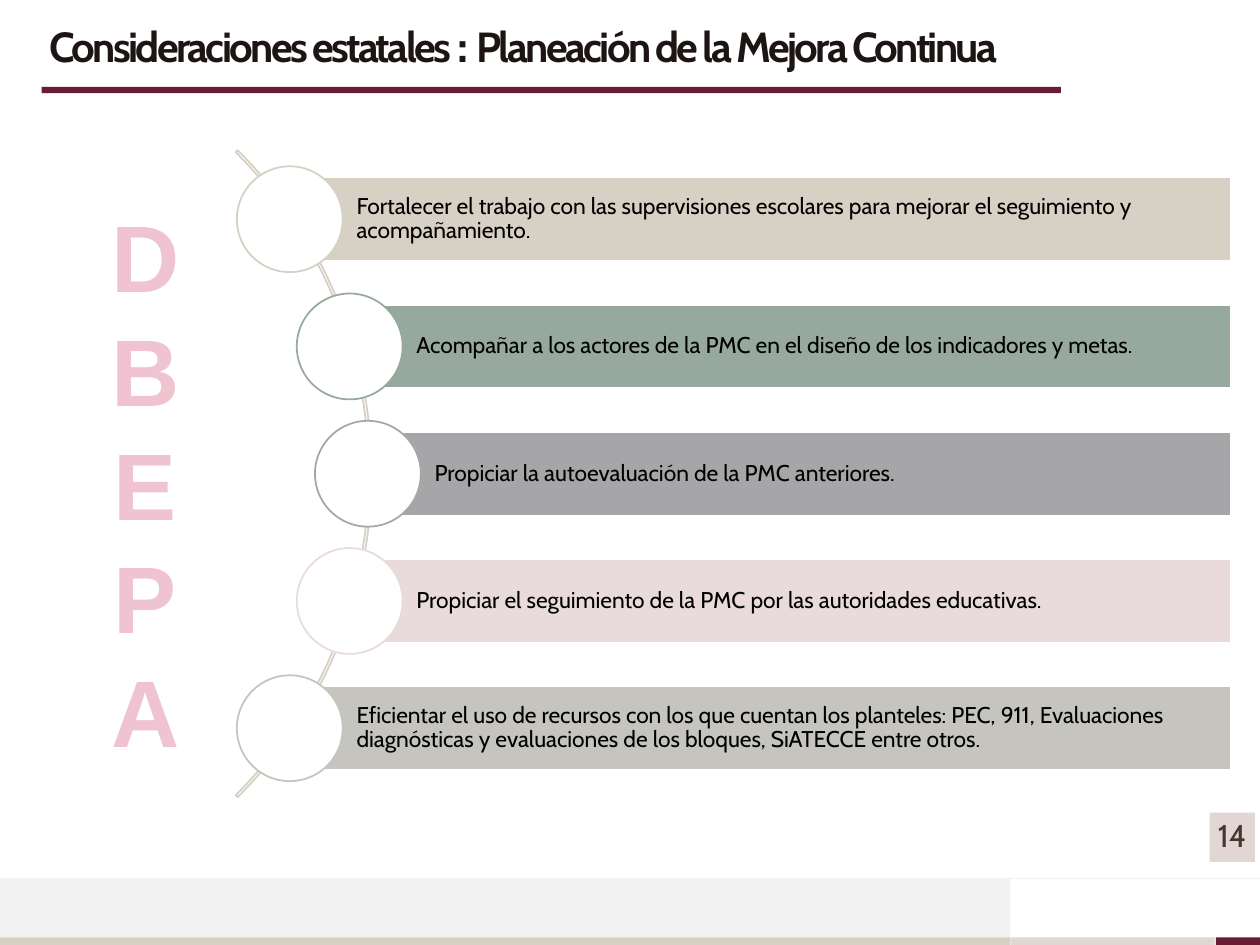
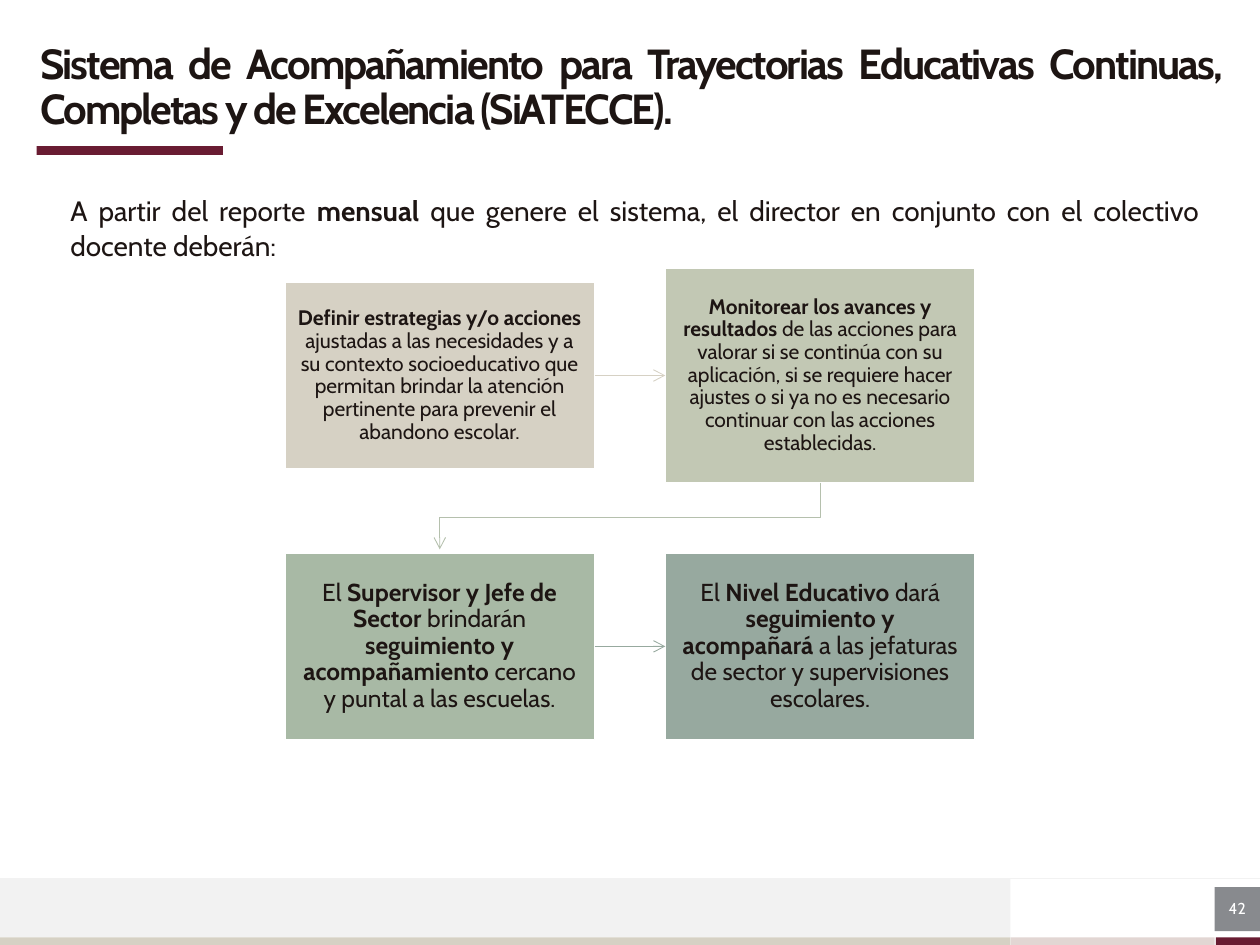
from math import sqrt

from lxml.etree import SubElement
from pptx import Presentation
from pptx.dml.color import RGBColor
from pptx.enum.shapes import MSO_CONNECTOR as Connector, MSO_SHAPE as Shape
from pptx.enum.text import MSO_ANCHOR as Anchor, MSO_AUTO_SIZE as AutoSize, PP_ALIGN as Align
from pptx.oxml.ns import qn
from pptx.util import Inches, Pt

WHITE = RGBColor(0xFF, 0xFF, 0xFF)
BLACK = RGBColor(0x00, 0x00, 0x00)
INK = RGBColor(0x1D, 0x15, 0x13)
BROWN = RGBColor(0x49, 0x35, 0x30)
WINE = RGBColor(0x69, 0x1C, 0x32)
PINK = RGBColor(0xEF, 0xC3, 0xD0)
ROSE = RGBColor(0xE9, 0xDB, 0xDB)
BLUSH = RGBColor(0xE2, 0xD6, 0xD3)
SAND = RGBColor(0xD6, 0xD1, 0xC4)
STONE = RGBColor(0xC5, 0xC4, 0xBF)
MOSS = RGBColor(0xC2, 0xC8, 0xB4)
SAGE = RGBColor(0xA8, 0xB9, 0xA5)
PALE_SAGE = RGBColor(0xB5, 0xC0, 0xAD)
TEAL = RGBColor(0x97, 0xA9, 0x9F)
GRAY = RGBColor(0xA6, 0xA6, 0xA8)
DARK_GRAY = RGBColor(0x88, 0x8A, 0x8E)
LIGHT_GRAY = RGBColor(0xF2, 0xF2, 0xF2)
FONT = "Cabin"


class Builder:
    """Holds the deck, its style and the current page."""

    def __init__(self):
        self.deck = Presentation()
        self.deck.slide_width, self.deck.slide_height = Inches(10), Inches(7.5)
        self.layout = self.deck.slide_layouts[5]
        self.page = None

    def add_page(self):
        self.page = self.deck.slides.add_slide(self.layout)

    def set_text(self, box, paragraphs, size, color=INK, align=Align.LEFT, anchor=Anchor.MIDDLE,
                 insets=(0, 0, 0, 0), spacing=0.9, font=FONT, bold=False):
        """Each paragraph is a list of (text, bold) pairs or one plain string."""
        frame = box.text_frame
        frame.word_wrap = True
        frame.auto_size = AutoSize.NONE
        frame.vertical_anchor = anchor
        (frame.margin_left, frame.margin_top,
         frame.margin_right, frame.margin_bottom) = map(Inches, insets)
        for index, content in enumerate(paragraphs):
            para = frame.add_paragraph() if index else frame.paragraphs[0]
            para.alignment = align
            para.line_spacing = spacing
            pairs = [(content, bold)] if isinstance(content, str) else content
            for text, heavy in pairs:
                span = para.add_run()
                span.text = text
                span.font.name, span.font.size, span.font.bold = font, Pt(size), heavy
                span.font.color.rgb = color

    def title(self, place, text, tracking, **style):
        box = self.page.shapes.title
        box.left, box.top, box.width, box.height = map(Inches, place)
        self.set_text(box, [text], 24, bold=True, **style)
        for properties in box.element.iter(qn("a:rPr")):
            properties.set("spc", str(round(tracking * 100)))
        return box

    def text(self, place, paragraphs, size, **style):
        box = self.page.shapes.add_textbox(*map(Inches, place))
        self.set_text(box, paragraphs, size, **style)

    def shape(self, place, fill=None, line=None, width=1, kind=Shape.RECTANGLE):
        shape = self.page.shapes.add_shape(kind, *map(Inches, place))
        shape.shadow.inherit = False
        if fill is None:
            shape.fill.background()
        else:
            shape.fill.solid()
            shape.fill.fore_color.rgb = fill
        if line is None:
            shape.line.fill.background()
        else:
            shape.line.color.rgb, shape.line.width = line, Pt(width)
        return shape

    def page_number(self, place, number, fill, size, color):
        self.set_text(self.shape(place, fill), [number], size, color=color, align=Align.CENTER)

    def style_line(self, line, color, arrow=True):
        line.line.color.rgb, line.line.width = color, Pt(0.5)
        if arrow:
            SubElement(line.element.spPr.find(qn("a:ln")), qn("a:tailEnd"), type="arrow")

    def connector(self, start, end, color, arrow=True):
        line = self.page.shapes.add_connector(Connector.STRAIGHT, *map(Inches, start + end))
        self.style_line(line, color, arrow)
        SubElement(line.element.spPr, qn("a:effectLst"))
        return line

    def join(self, source, target, color):
        line = self.connector((0, 0), (0, 0), color)
        line.begin_connect(source, 3)
        line.end_connect(target, 1)

    def bent_arrow(self, points, color):
        corners = [tuple(map(Inches, point)) for point in points]
        pen = self.page.shapes.build_freeform(*corners[0])
        pen.add_line_segments(corners[1:], close=False)
        arrow = pen.convert_to_shape()
        arrow.shadow.inherit = False
        arrow.fill.background()
        self.style_line(arrow, color)

    def footer(self):
        """Draw the bands and move them to the layout that all pages share."""
        for holder in list(self.layout.placeholders)[1:]:
            holder.element.getparent().remove(holder.element)
        bands = [
            self.shape((8.02, 7.44, 1.62, 0.06), BLUSH),
            self.shape((0, 6.97, 8.02, 0.47), LIGHT_GRAY),
            self.shape((0, 7.44, 8.02, 0.06), SAND),
            self.shape((9.65, 7.44, 0.35, 0.06), WINE),
            self.connector((10, 6.97), (0, 6.97), LIGHT_GRAY, arrow=False),
        ]
        tree = self.layout.placeholders[0].element.getparent()
        for band in bands:
            tree.append(band.element)


def planning_page(build):
    build.page_number((9.6, 6.45, 0.36, 0.39), "14", BLUSH, 18, BROWN)
    title = build.title((0.39, 0.18, 9.61, 0.39),
                        [("Consideraciones estatales ", True), (": ", True),
                         ("Planeación de la Mejora Continua", True)], -1.5)
    title.text_frame.paragraphs[0].runs[1].font.size = Pt(27)
    build.shape((0.33, 0.69, 8.09, 0.05), WINE)

    # Arc that carries the circles
    arc_x, arc_y, arc_size = -0.68, 3.76, 7.26
    arc = build.shape((arc_x - arc_size / 2, arc_y - arc_size / 2, arc_size, arc_size),
                      line=SAND, kind=Shape.BLOCK_ARC)
    for index, value in enumerate((189, 27, 0.003)):
        arc.adjustments[index] = value

    # Bars with a circle at the left end, centred on the arc
    radius, step, circle, bar_height, bar_right = 3.6, 1.01, 0.84, 0.67, 9.77
    actions = [
        (SAND, "Fortalecer el trabajo con las supervisiones escolares para mejorar el "
               "seguimiento y acompañamiento."),
        (TEAL, "Acompañar a los actores de la PMC en el diseño de los indicadores y metas."),
        (GRAY, "Propiciar la autoevaluación de la PMC anteriores."),
        (ROSE, "Propiciar el seguimiento de la PMC por las autoridades educativas."),
        (STONE, "Eficientar el uso de recursos con los que cuentan los planteles: PEC, 911, "
                "Evaluaciones diagnósticas y evaluaciones de los bloques, SiATECCE entre otros."),
    ]
    for index, (color, action) in enumerate(actions):
        offset = (index - 2) * step
        x, y = arc_x + sqrt(radius ** 2 - offset ** 2), arc_y + offset
        bar = build.shape((x, y - bar_height / 2, bar_right - x, bar_height), color, WHITE, 1.5)
        build.set_text(bar, [action], 13, color=BLACK, insets=(0.53, 0.04, 0.04, 0.04))
        build.shape((x - circle / 2, y - circle / 2, circle, circle), WHITE, color,
                    kind=Shape.OVAL)

    # Vertical acronym
    build.text((0.78, 1.52, 0.75, 4.64), list("DBEPA"), 54, color=PINK, font="Arial", bold=True,
               align=Align.CENTER, anchor=Anchor.TOP, insets=(0, 0.05, 0, 0.05),
               spacing=Pt(65))


def tracking_page(build):
    build.page_number((9.64, 7.04, 0.36, 0.35), "42", DARK_GRAY, 9, WHITE)
    build.shape((0.29, 1.16, 1.48, 0.07), WINE)
    flowing = dict(align=Align.JUSTIFY, anchor=Anchor.TOP, insets=(0.1, 0.05, 0.1, 0.05))
    build.title((0.22, 0.29, 9.57, 0.83),
                "Sistema de Acompañamiento para Trayectorias Educativas Continuas, "
                "Completas y de Excelencia (SiATECCE).", -1.1, **flowing)
    build.text((0.46, 1.47, 9.16, 0.65),
               [[("A partir del reporte ", False), ("mensual", True),
                 (" que genere el sistema, el director en conjunto con el colectivo "
                  "docente deberán:", False)]], 16, spacing=1.06, **flowing)

    # Four steps in two rows
    left, right, width, height = 2.26, 5.28, 2.46, 1.48
    steps = [
        ((left, 2.24, width, height), SAND, 12, 0.09, [
            ("Definir estrategias y/o acciones ", True),
            ("ajustadas a las necesidades y a su contexto socioeducativo que permitan brindar "
             "la atención pertinente para prevenir el abandono escolar.", False)]),
        ((right, 2.13, width, 1.7), MOSS, 12, 0.09, [
            ("Monitorear los avances y resultados ", True),
            ("de las acciones para valorar si se continúa con su aplicación, si se requiere "
             "hacer ajustes o si ya no es necesario continuar con las acciones establecidas.",
             False)]),
        ((left, 4.39, width, height), SAGE, 14, 0.11, [
            ("El ", False), ("Supervisor y Jefe de Sector ", True), ("brindarán ", False),
            ("seguimiento y acompañamiento ", True),
            ("cercano y puntal a las escuelas.", False)]),
        ((right, 4.39, width, height), TEAL, 14, 0.11, [
            ("El ", False), ("Nivel Educativo ", True), ("dará ", False),
            ("seguimiento y acompañará ", True),
            ("a las jefaturas de sector y supervisiones escolares.", False)]),
    ]
    boxes = []
    for place, color, size, inset, content in steps:
        box = build.shape(place, color, WHITE)
        build.set_text(box, [content], size, align=Align.CENTER, insets=(inset,) * 4)
        boxes.append(box)

    # Arrows between the steps
    define, monitor, supervise, follow = boxes
    build.join(define, monitor, SAND)
    build.bent_arrow([(6.51, 3.83), (6.51, 4.11), (3.49, 4.11), (3.49, 4.36)], PALE_SAGE)
    build.join(supervise, follow, TEAL)


def main():
    build = Builder()
    build.add_page()
    build.footer()
    planning_page(build)
    build.add_page()
    tracking_page(build)
    build.deck.save("out.pptx")


if __name__ == "__main__":
    main()
